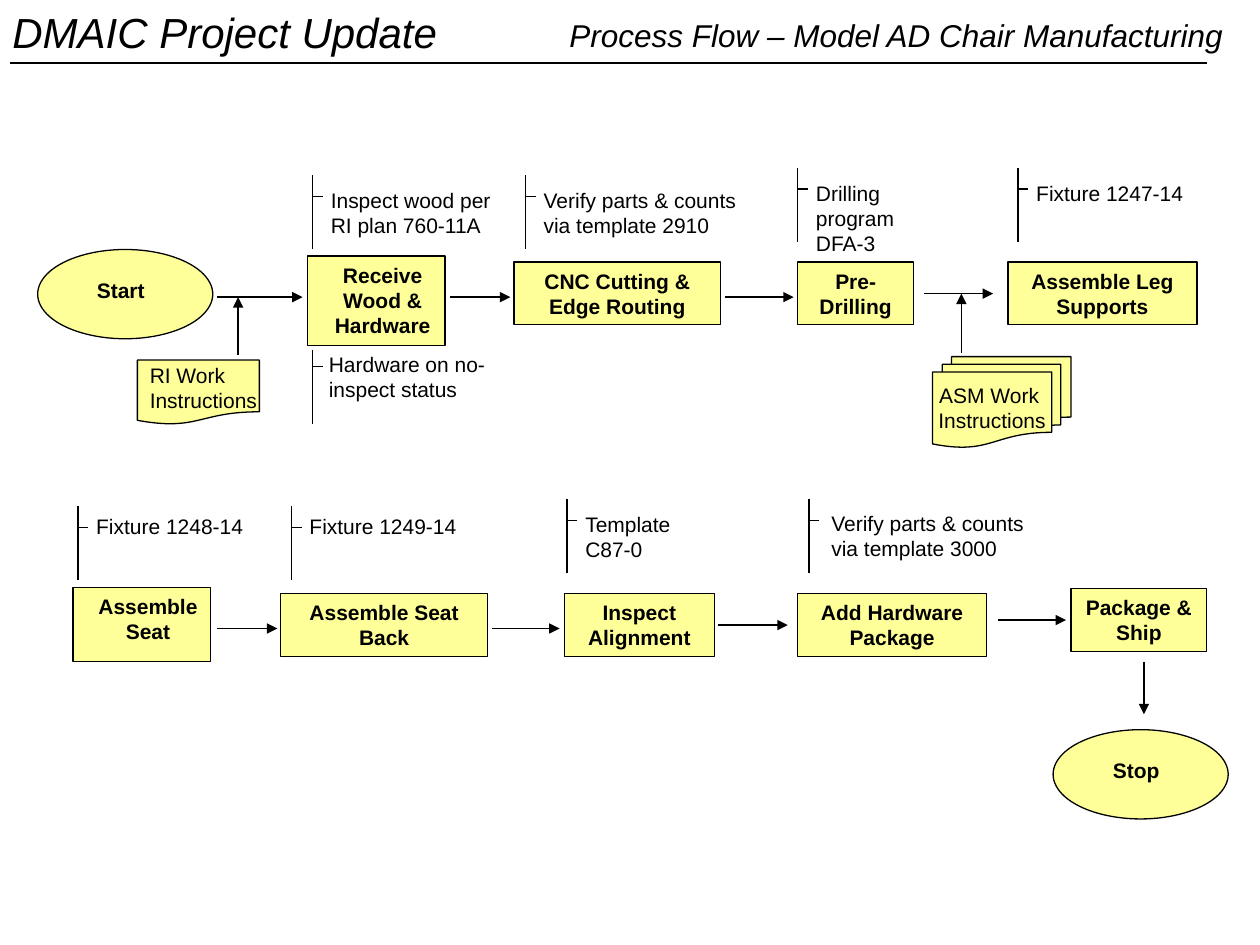
from pptx import Presentation
from pptx import util as u
from pptx.dml.color import RGBColor
from pptx.enum import shapes as sh, text as tx
from pptx.oxml.ns import qn
from lxml import etree

INK, PALE = "000000", "FFFF99"
PAD = (0.25, 0.13, 0.25, 0.13)
LEFT, MID = tx.PP_ALIGN.LEFT, tx.PP_ALIGN.CENTER
KIND = sh.MSO_SHAPE


def tint(code):
    return RGBColor.from_string(code)


def write(shape, lines, size=12, bold=False, slant=False, align=LEFT,
          pad=PAD, wrap=True, anchor=tx.MSO_ANCHOR.TOP):
    """Fill a shape's text frame, one paragraph for each line."""
    frame = shape.text_frame
    frame.word_wrap = wrap
    frame.auto_size = tx.MSO_AUTO_SIZE.NONE
    frame.vertical_anchor = anchor
    (frame.margin_left, frame.margin_top,
     frame.margin_right, frame.margin_bottom) = [u.Cm(n) for n in pad]
    for i, line in enumerate(lines):
        para = frame.add_paragraph() if i else frame.paragraphs[0]
        para.alignment = align
        run = para.add_run()
        run.text = line
        font = run.font
        font.name, font.size = "Arial", u.Pt(size)
        font.bold, font.italic = bold, slant
        font.color.rgb = tint(INK)


def label(slide, box, words, **style):
    shape = slide.shapes.add_textbox(*[u.Cm(n) for n in box])
    write(shape, [words], **style)


def block(slide, kind, box, lines, **style):
    shape = slide.shapes.add_shape(kind, *[u.Cm(n) for n in box])
    shape.shadow.inherit = False
    shape.fill.solid()
    shape.fill.fore_color.rgb = tint(PALE)
    shape.line.color.rgb = tint(INK)
    shape.line.width = u.Pt(0.75)
    write(shape, lines, **style)


def rule(slide, ends, width=0.75, arrow=False):
    """Draw a straight line from ends (x1, y1, x2, y2)."""
    link = slide.shapes.add_connector(
        sh.MSO_CONNECTOR.STRAIGHT, *[u.Cm(n) for n in ends])
    link.line.color.rgb = tint(INK)
    link.line.width = u.Pt(width)
    if arrow:
        etree.SubElement(link.line._get_or_add_ln(), qn("a:tailEnd"),
                         type="triangle")
    etree.SubElement(link._element.spPr, qn("a:effectLst"))


def header(slide):
    label(slide, (0, 0, 9.37, 1.3), "DMAIC Project Update",
          size=24, slant=True, wrap=False)
    title = slide.shapes.title
    title.left, title.top = u.Cm(11.23), u.Cm(0.2)
    title.width, title.height = u.Cm(13.97), u.Cm(1.02)
    write(title, ["Process Flow – Model AD Chair Manufacturing"],
          size=18, slant=True, wrap=False)
    rule(slide, (0.2, 1.27, 24.33, 1.27), width=1.5)


def note(slide, x, y, wide, words, dx=0.12, dy=0.12, tick=0.43):
    """Draw a bar with a tick, and a remark beside it."""
    rule(slide, (x, y, x, y + 1.49))
    rule(slide, (x, y + tick, x + 0.21, y + tick))
    label(slide, (x + dx, y + dy, wide, 1.27), words)


def step(slide, box, words, shift=0):
    """Draw a process box, its label moved right by shift."""
    pad = (0.25 + shift, 0.13, 0.25 - shift, 0.13)
    block(slide, KIND.FLOWCHART_PROCESS if shift else KIND.RECTANGLE,
          box, [words], bold=True, align=MID, pad=pad)


def end(slide, x, y, word):
    block(slide, KIND.OVAL, (x, y, 3.53, 1.8), [word], bold=True, align=MID,
          pad=(0, 0, 0.18, 0.16), wrap=False, anchor=tx.MSO_ANCHOR.MIDDLE)


def flow(slide, steps, notes, arrows):
    """Draw one row of the process."""
    for box, words, shift in steps:
        step(slide, box, words, shift)
    for item, place in notes:
        note(slide, *item, **place)
    for ends in arrows:
        rule(slide, ends, arrow=True)


def upper(slide):
    y, tall = 5.28, 1.27
    end(slide, 0.76, 5.03, "Start")
    flow(slide, [
        ((6.2, 5.16, 2.77, 1.8), "Receive Wood & Hardware", 0.13),
        ((10.36, y, 4.17, tall), "CNC Cutting & Edge Routing", 0),
        ((16.08, y, 2.34, tall), "Pre-Drilling", 0),
        ((20.32, y, 3.81, tall), "Assemble Leg Supports", 0),
    ], [
        ((6.3, 3.53, 3.96, "Inspect wood per RI plan 760-11A"), {}),
        ((6.3, 7.06, 4.5, "Hardware on no-inspect status"),
         dict(dx=0.08, dy=-0.1, tick=0.33)),
        ((10.59, 3.53, 4.67, "Verify parts & counts via template 2910"), {}),
        ((16.08, 3.38, 2.84, "Drilling program DFA-3"), {}),
        ((20.52, 3.38, 3.48, "Fixture 1247-14"), {}),
    ], [
        (4.37, 5.99, 6.1, 5.99),
        (9.07, 5.99, 10.29, 5.99),
        (14.61, 5.99, 16, 5.99),
        (18.62, 5.92, 20.02, 5.92),
        (4.8, 7.16, 4.8, 5.99),
        (19.38, 7.11, 19.38, 5.92),
    ])
    block(slide, KIND.FLOWCHART_DOCUMENT, (2.77, 7.26, 2.46, 1.3),
          ["RI Work Instructions"], pad=(0.25, 0.05, 0, 0))
    block(slide, KIND.FLOWCHART_MULTIDOCUMENT, (18.8, 7.19, 2.79, 1.83),
          ["ASM Work ", "Instructions"], align=MID, wrap=False,
          anchor=tx.MSO_ANCHOR.MIDDLE)


def lower(slide):
    y, tall = 11.96, 1.27
    flow(slide, [
        ((1.47, 11.84, 2.77, 1.5), "Assemble Seat", 0.13),
        ((5.66, y, 4.17, tall), "Assemble Seat Back", 0),
        ((11.38, y, 3.02, tall), "Inspect Alignment", 0),
        ((16.08, y, 3.81, tall), "Add Hardware Package", 0),
        ((21.59, 11.86, 2.74, tall), "Package & Ship", 0),
    ], [
        ((1.57, 10.21, 3.96, "Fixture 1248-14"), dict(dy=0.02)),
        ((5.87, 10.21, 3.96, "Fixture 1249-14"), dict(dy=0.02)),
        ((11.43, 10.06, 2.84, "Template C87-0"), {}),
        ((16.31, 10.06, 4.67, "Verify parts & counts via template 3000"),
         dict(dx=0.2, dy=0.1)),
    ], [
        (4.37, 12.67, 5.59, 12.67),
        (9.91, 12.67, 11.28, 12.67),
        (14.48, 12.6, 15.88, 12.6),
        (20.12, 12.5, 21.49, 12.5),
        (23.06, 13.34, 23.06, 14.4),
    ])
    end(slide, 21.23, 14.71, "Stop")


def main():
    deck = Presentation()
    deck.slide_width, deck.slide_height = u.Cm(25.4), u.Cm(19.05)
    slide = deck.slides.add_slide(deck.slide_layouts[5])
    header(slide)
    upper(slide)
    lower(slide)
    deck.save("out.pptx")


if __name__ == "__main__":
    main()
